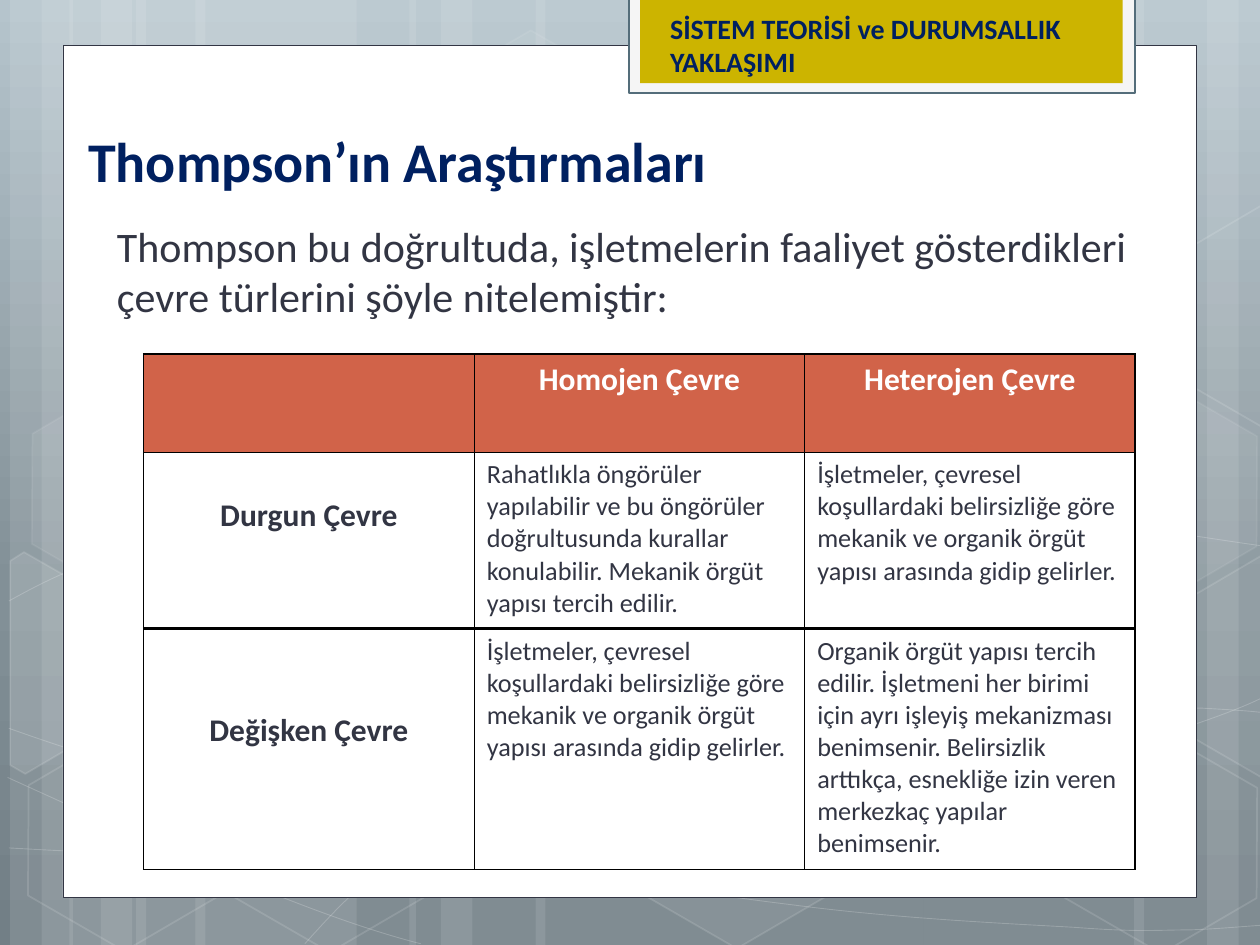
from copy import deepcopy
from dataclasses import dataclass
from math import cos, radians, sin
from typing import NamedTuple

from lxml import etree
from pptx import Presentation, util as u
from pptx.dml.color import RGBColor
from pptx.enum import shapes as kinds, text as txt
from pptx.oxml.ns import qn


@dataclass(frozen=True)
class Theme:
    font: str = "Calibri"
    white: str = "FFFFFF"
    black: str = "000000"
    navy: str = "002060"
    ink: str = "323543"
    gold: str = "CCB400"
    pale: str = "F5F5F5"
    slate: str = "546D7A"
    rust: str = "D16349"
    sky: tuple = ((0, "B5C4CC"), (0.62, "829097"), (1, "727F86"))
    title: int = 32
    lead: int = 24
    head: int = 18
    tag: int = 16
    body: int = 15


class Box(NamedTuple):
    x: float
    y: float
    w: float
    h: float

    def emu(self) -> list:
        return [u.Inches(v) for v in self]


class Bar(NamedTuple):
    x: float
    w: float
    turn: int = 0


class Curve(NamedTuple):
    knots: list  # a start point, then two controls and an end per segment
    flat: int = -1  # the segment that is straight and has an end only


class Hex(NamedTuple):
    x: float
    y: float
    fill: int
    line: int


class Shard(NamedTuple):
    mid: tuple
    points: list
    fill: int
    line: int


T = Theme()
TILT = 30

BARS = [Bar(1.08, 1.75), Bar(0.08, 0.5), Bar(0.33, 0.83), Bar(1.55, 1.75), Bar(0.55, 0.5),
        Bar(0.8, 0.83), Bar(7.33, 1.75, 180), Bar(9.58, 0.5, 180), Bar(9, 0.83, 180),
        Bar(4.25, 3.08), Bar(3.25, 0.5), Bar(3.5, 0.83)]

CURVES = [
    Curve([(0.07, 6.73), (0.61, 6.76), (1.15, 6.79), (1.9, 6.78), (2.65, 6.77), (3.58, 6.75),
           (4.58, 6.65), (5.58, 6.55), (7, 6.36), (7.92, 6.17), (8.83, 5.98), (9.77, 5.68), (10.07, 5.51)]),
    Curve([(0.07, 4.77), (0.36, 4.61), (0.65, 4.46), (1.21, 4.31), (1.78, 4.16), (2.59, 3.94),
           (3.47, 3.87), (4.36, 3.8), (5.44, 3.79), (6.54, 3.87), (7.64, 3.95), (9.47, 4.26), (10.07, 4.34)]),
    Curve([(0.06, 6.17), (1.27, 6.72), (2.47, 7.27), (3.34, 7.49)]),
    Curve([(0.07, 5.78), (0.38, 5.89), (0.7, 6), (1.28, 6.16), (1.86, 6.31), (2.73, 6.56),
           (3.57, 6.73), (4.4, 6.9), (5.45, 7.08), (6.28, 7.18), (7.11, 7.29), (8, 7.33),
           (8.53, 7.36), (9.05, 7.4), (9.19, 7.38), (9.45, 7.38), (9.71, 7.37), (9.89, 7.35), (10.07, 7.34)]),
    Curve([(2.42, 7.49), (2.6, 7.29), (2.78, 7.09), (3.02, 6.91), (3.26, 6.73), (3.6, 6.53),
           (3.88, 6.39), (4.16, 6.25), (4.33, 6.19), (4.7, 6.09), (5.06, 5.99), (5.73, 5.85),
           (6.08, 5.78), (6.44, 5.71), (6.49, 5.71), (6.8, 5.69), (7.11, 5.66), (7.6, 5.63),
           (7.94, 5.62), (8.29, 5.61), (8.86, 5.62), (8.86, 5.62), (9.53, 5.62), (9.71, 5.63),
           (9.88, 5.64), (9.97, 5.65), (10.06, 5.66), (10.03, 5.65), (10.06, 5.66)], flat=7),
]

HEXES = [Hex(3.34, 0.36, 4, 8), Hex(4.97, 5.89, 6, 12), Hex(0.11, 5.91, 0, 12),
         Hex(0.14, 3.12, 7, 8), Hex(1.74, 5.92, 0, 12), Hex(7.53, 4.53, 10, 12),
         Hex(8.34, 5.93, 0, 12), Hex(8.34, 3.14, 7, 8)]

SHARDS = [
    Shard((0.36, 5.35), [(0.08, 4.45), (0.19, 4.38), (0.96, 4.82), (0.95, 5.7),
                         (0.2, 6.14), (0.08, 6.07)], 10, 12),
    Shard((9.85, 5.2), [(9.26, 4.85), (10.01, 4.41), (10.09, 4.46), (10.09, 6.13),
                        (10.02, 6.17), (9.26, 5.73)], 4, 12),
    Shard((9.85, 2.41), [(9.26, 2.07), (10.01, 1.63), (10.1, 1.68), (10.09, 3.35),
                         (10.02, 3.39), (9.26, 2.95)], 0, 12),
]

MIXED = ("İşletmeler, çevresel koşullardaki belirsizliğe göre mekanik ve organik "
         "örgüt yapısı arasında gidip gelirler.")
ROWS = [
    ["", "Homojen Çevre", "Heterojen Çevre"],
    ["Durgun Çevre",
     "Rahatlıkla öngörüler yapılabilir ve bu öngörüler doğrultusunda kurallar "
     "konulabilir. Mekanik örgüt yapısı tercih edilir.", MIXED],
    ["Değişken Çevre", MIXED,
     "Organik örgüt yapısı tercih edilir. İşletmeni her birimi için ayrı işleyiş "
     "mekanizması benimsenir. Belirsizlik arttıkça, esnekliğe izin veren merkezkaç "
     "yapılar benimsenir."],
]


def rgb(code: str) -> RGBColor:
    return RGBColor.from_string(code)


def paint(shape, fill=None, line=None, width=1.0, clear=100, faint=100) -> None:
    """Set fill and line; clear and faint are their opacities in percent."""
    shape.shadow.inherit = False
    if fill and clear:
        shape.fill.solid()
        shape.fill.fore_color.rgb = rgb(fill)
    else:
        shape.fill.background()
    if line:
        shape.line.color.rgb = rgb(line)
        shape.line.width = u.Pt(width)
    else:
        shape.line.fill.background()
    for query, share in (("a:solidFill/a:srgbClr", clear), ("a:ln/a:solidFill/a:srgbClr", faint)):
        for color in shape.element.spPr.xpath(query):
            if share < 100:
                etree.SubElement(color, qn("a:alpha"), val=str(share * 1000))


def block(slide, box: Box, kind=kinds.MSO_SHAPE.RECTANGLE, turn=0, **look):
    shape = slide.shapes.add_shape(kind, *box.emu())
    shape.rotation = turn
    paint(shape, **look)
    return shape


def trace(slide, points: list, close: bool, **look):
    start, *rest = [(u.Inches(x), u.Inches(y)) for x, y in points]
    pen = slide.shapes.build_freeform(*start)
    pen.add_line_segments(rest, close=close)
    shape = pen.convert_to_shape()
    paint(shape, **look)
    return shape


def sweep(slide, curve: Curve) -> None:
    """Trace the knots, then join each three into a cubic segment."""
    shape = trace(slide, curve.knots, False, line=T.white, width=0.5, faint=20)
    steps = shape.element.spPr.xpath(".//a:lnTo")
    part = 0
    while steps:
        size = 1 if part == curve.flat else 3
        trio, steps = steps[:size], steps[size:]
        if size == 3:
            cubic = etree.Element(qn("a:cubicBezTo"))
            trio[0].addprevious(cubic)
            for step in trio:
                cubic.append(step[0])
                step.getparent().remove(step)
        part += 1


def turn_back(point: tuple, mid: tuple) -> tuple:
    """The place of a point before the tilt about mid."""
    dx, dy = point[0] - mid[0], point[1] - mid[1]
    c, s = cos(radians(TILT)), sin(radians(TILT))
    return mid[0] + dx * c + dy * s, mid[1] - dx * s + dy * c


def write(frame, words: str, size: int, color: str, bold=False, align=txt.PP_ALIGN.LEFT) -> None:
    para = frame.paragraphs[0]
    para.alignment = align
    run = para.add_run()
    run.text = words
    font = run.font
    font.name, font.size, font.bold = T.font, u.Pt(size), bold
    font.color.rgb = rgb(color)


def label(shape, words: str, **look) -> None:
    frame = shape.text_frame
    frame.word_wrap = True
    frame.auto_size = txt.MSO_AUTO_SIZE.SHAPE_TO_FIT_TEXT
    frame.vertical_anchor = txt.MSO_ANCHOR.TOP
    write(frame, words, **look)


def edge(cell, side: str, width: float) -> None:
    line = etree.SubElement(cell._tc.get_or_add_tcPr(), qn("a:ln" + side), w=str(u.Pt(width)))
    fill = etree.SubElement(line, qn("a:solidFill"))
    etree.SubElement(fill, qn("a:srgbClr"), val=T.black)


def backdrop(slide) -> None:
    fill = slide.background.fill
    fill.gradient()
    fill.gradient_angle = 270
    last = fill.gradient_stops[1]._gs
    last.addnext(deepcopy(last))
    for stop, (place, color) in zip(fill.gradient_stops, T.sky):
        stop.position, stop.color.rgb = place, rgb(color)
    for bar in BARS:
        block(slide, Box(bar.x, 0, bar.w, 7.5), turn=bar.turn, fill=T.white, clear=10)
    for curve in CURVES:
        sweep(slide, curve)
    for h in HEXES:
        shape = block(slide, Box(h.x, h.y, 1.75, 1.52), kinds.MSO_SHAPE.HEXAGON, TILT,
                      fill=T.white, line=T.white, clear=h.fill, faint=h.line)
        shape.adjustments[0] = 0.285
    for s in SHARDS:
        shape = trace(slide, [turn_back(p, s.mid) for p in s.points], True,
                      fill=T.white, line=T.white, clear=s.fill, faint=s.line)
        shape.rotation = TILT


def grid(slide, box: Box) -> None:
    table = slide.shapes.add_table(3, 3, *box.emu()).table
    table.first_row = table.horz_banding = False
    for col in table.columns:
        col.width = u.Inches(box.w / 3)
    for row, high in zip(table.rows, (0.78, 1.4, 1.91)):
        row.height = u.Inches(high)
    drops = (0.05, 0.35, 0.66)  # top margins of the row labels
    for r, line in enumerate(ROWS):
        for c, words in enumerate(line):
            cell = table.cell(r, c)
            edge(cell, "L", 0.75 if c else 1)
            edge(cell, "R", 0.75 if c < 2 else 1)
            edge(cell, "T", 2 if r == 2 else 1)
            edge(cell, "B", 2 if r == 1 else 1)
            if r == 0:
                cell.fill.solid()
                cell.fill.fore_color.rgb = rgb(T.rust)
            else:
                cell.fill.background()
            if c == 0:
                cell.margin_top = u.Inches(drops[r])
            head = r == 0 or c == 0
            if words:
                write(cell.text_frame, words, T.head if head else T.body,
                      T.ink if r else T.white, bold=head,
                      align=txt.PP_ALIGN.CENTER if head else txt.PP_ALIGN.LEFT)


def main() -> None:
    deck = Presentation()
    deck.slide_width, deck.slide_height = u.Inches(10), u.Inches(7.5)
    slide = deck.slides.add_slide(deck.slide_layouts[5])
    backdrop(slide)

    # Page panel and corner tab
    block(slide, Box(0.5, 0.36, 9, 6.76), fill=T.white, line=T.ink, width=0.5)
    block(slide, Box(4.99, -0.02, 4.02, 0.76), fill=T.pale, line=T.slate, width=1.25)
    block(slide, Box(5.08, -0.02, 3.83, 0.68), fill=T.gold)

    # Texts, with the title raised above the panel
    label(slide.shapes.add_textbox(*Box(5.22, 0.04, 3.8, 0.91).emu()),
          "SİSTEM TEORİSİ ve DURUMSALLIK YAKLAŞIMI", size=T.tag, color=T.navy, bold=True)
    label(slide.shapes.add_textbox(*Box(0.83, 1.7, 8.35, 0.91).emu()),
          "Thompson bu doğrultuda, işletmelerin faaliyet gösterdikleri çevre türlerini "
          "şöyle nitelemiştir:", size=T.lead, color=T.ink)
    title = slide.shapes.title
    title.left, title.top, title.width, title.height = Box(0.6, 0.95, 7.32, 0.64).emu()
    label(title, "Thompson’ın Araştırmaları", size=T.title, color=T.navy, bold=True)
    title.element.getparent().append(title.element)

    grid(slide, Box(1.14, 2.81, 7.87, 4.09))
    deck.save("out.pptx")


if __name__ == "__main__":
    main()
